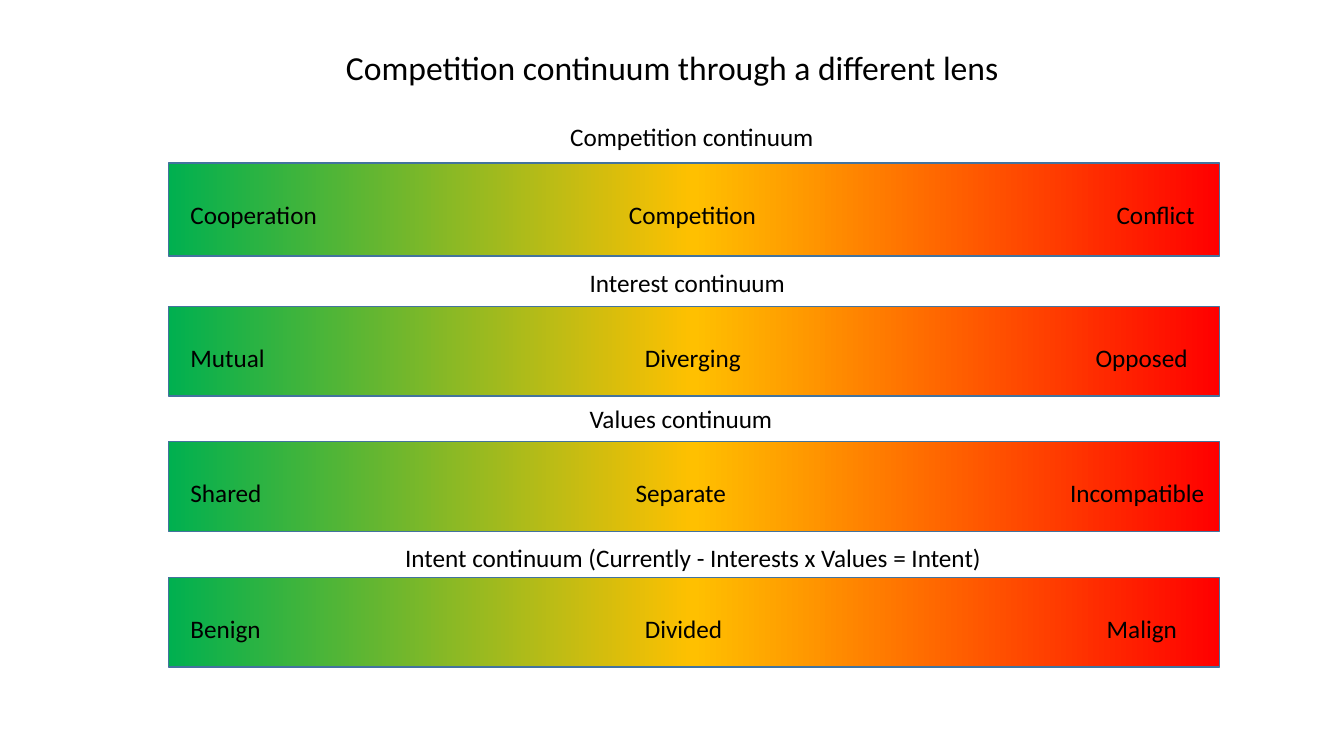
"""Build a slide of four labelled colour continuums."""
from typing import NamedTuple

from lxml import etree
from pptx import Presentation
from pptx.dml.color import RGBColor
from pptx.enum.shapes import MSO_SHAPE
from pptx.enum.text import MSO_ANCHOR, MSO_AUTO_SIZE, PP_ALIGN
from pptx.oxml.ns import qn
from pptx.util import Cm, Pt

RECT = MSO_SHAPE.RECTANGLE
TOP = MSO_ANCHOR.TOP
FIT = MSO_AUTO_SIZE.SHAPE_TO_FIT_TEXT
NO_FIT = MSO_AUTO_SIZE.NONE
LEFT = PP_ALIGN.LEFT
MID = PP_ALIGN.CENTER

BLACK = RGBColor(0x00, 0x00, 0x00)
GREEN = RGBColor(0x00, 0xB0, 0x50)
AMBER = RGBColor(0xFF, 0xC0, 0x00)
RED = RGBColor(0xFF, 0x00, 0x00)
EDGE = RGBColor(0x43, 0x73, 0x9E)

FONT = "Calibri"
BAR_X, BAR_W = 4.24, 26.49
TEXT_X, TEXT_H, DROP = 4.55, 1.02, 0.78


class Label(NamedTuple):
    """Text with its left edge and width in centimetres."""
    text: str
    left: float
    width: float


class Band(NamedTuple):
    """One continuum: heading, bar and the labels along it."""
    head: Label
    head_y: float
    bar_y: float
    bar_h: float
    labels: tuple[Label, ...]


BANDS = (
    Band(Label("Competition continuum", 14.12, 6.73), 2.92, 4.11, 2.34,
         (Label("Cooperation", TEXT_X, 3.73),
          Label("Competition", 15.6, 3.76),
          Label("Conflict", 27.89, 2.51))),
    Band(Label("Interest continuum", 14.61, 5.49), 6.6, 7.72, 2.26,
         (Label("Mutual", TEXT_X, 2.41),
          Label("Diverging", 16, 2.97),
          Label("Opposed", 27.36, 2.87))),
    Band(Label("Values continuum", 14.61, 5.18), 10.03, 11.13, 2.26,
         (Label("Shared", TEXT_X, 2.34),
          Label("Separate", 15.77, 2.82),
          Label("Incompatible", 26.72, 3.94))),
    Band(Label("Intent continuum (Currently - Interests x Values = Intent)",
               9.96, 15.06), 13.54, 14.55, 2.26,
         (Label("Benign", TEXT_X, 2.31),
          Label("Divided", 16, 2.49),
          Label("Malign", 27.64, 2.31))),
)


def write(shape, text: str, *, size: int = 18, align=LEFT,
          wrap: bool = False, fit=FIT, space: float = 1.0) -> None:
    """Put formatted text into a shape."""
    frame = shape.text_frame
    frame.text = text
    frame.word_wrap = wrap
    frame.auto_size = fit
    frame.vertical_anchor = TOP
    para = frame.paragraphs[0]
    para.alignment = align
    para.line_spacing = space
    font = para.runs[0].font
    font.name = FONT
    font.size = Pt(size)
    font.color.rgb = BLACK


def blend(shape, *hues: RGBColor) -> None:
    """Fill a shape from left to right with evenly spaced hues."""
    shape.fill.gradient()
    shape.fill.gradient_angle = 0
    stops = shape.element.spPr.find(".//" + qn("a:gsLst"))
    for stop in list(stops):
        stops.remove(stop)
    for num, hue in enumerate(hues):
        place = 100000 * num // (len(hues) - 1)
        stop = etree.SubElement(stops, qn("a:gs"), pos=str(place))
        etree.SubElement(stop, qn("a:srgbClr"), val=str(hue))


def add_label(group, label: Label, top: float) -> None:
    """Add one label to a group."""
    box = group.shapes.add_textbox(
        Cm(label.left), Cm(top), Cm(label.width), Cm(TEXT_H))
    write(box, label.text)


def add_band(slide, band: Band) -> None:
    """Draw one continuum as a group."""
    group = slide.shapes.add_group_shape()
    add_label(group, band.head, band.head_y)
    bar = group.shapes.add_shape(
        RECT, Cm(BAR_X), Cm(band.bar_y), Cm(BAR_W), Cm(band.bar_h))
    bar.shadow.inherit = False
    blend(bar, GREEN, AMBER, RED)
    bar.line.color.rgb = EDGE
    bar.line.width = Pt(1)
    for label in band.labels:
        add_label(group, label, band.bar_y + DROP)


def main() -> None:
    """Build and save the deck."""
    deck = Presentation()
    deck.slide_width, deck.slide_height = Cm(33.87), Cm(19.05)
    slide = deck.slides.add_slide(deck.slide_layouts[5])
    title = slide.shapes.title
    title.left, title.top = Cm(4.24), Cm(1.17)
    title.width, title.height = Cm(25.4), Cm(1.73)
    write(title, "Competition continuum through a different lens",
          size=24, align=MID, wrap=True, fit=NO_FIT, space=0.9)
    for band in BANDS:
        add_band(slide, band)
    deck.save("out.pptx")


if __name__ == "__main__":
    main()
